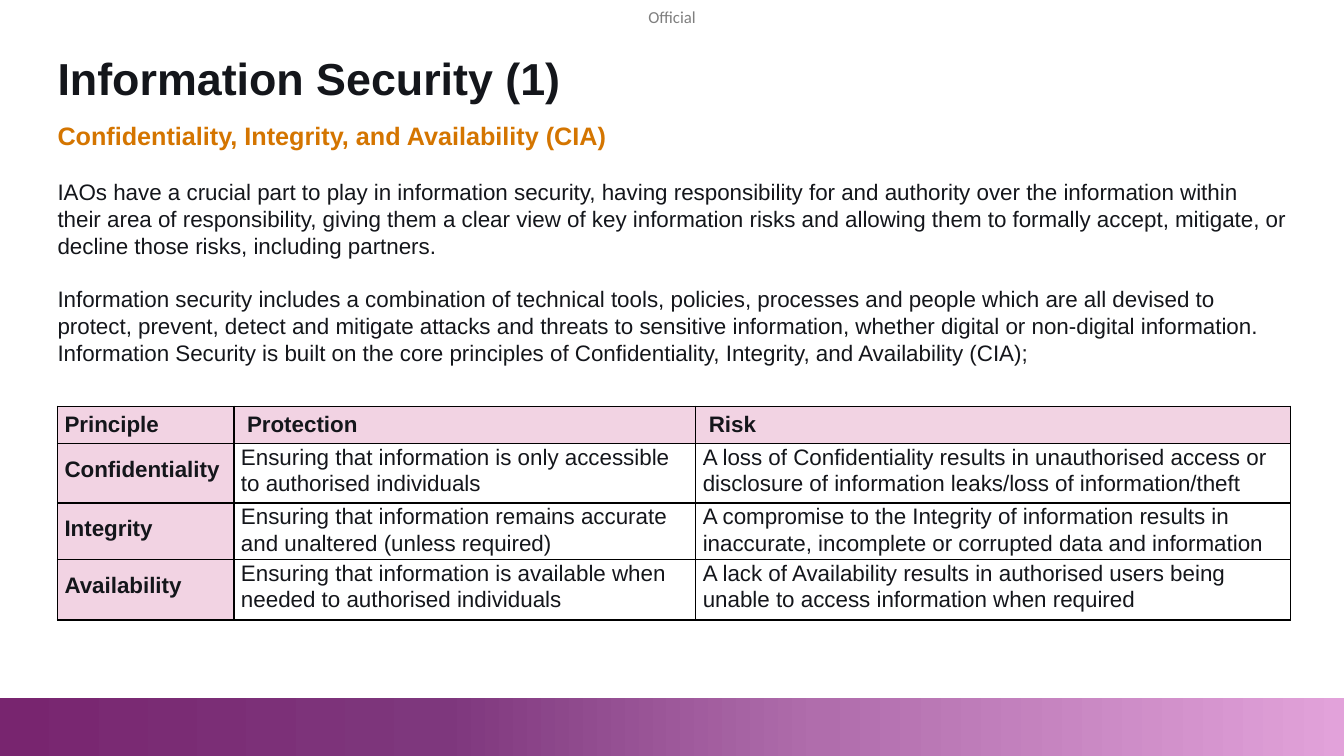
from lxml import etree
from pptx import Presentation
from pptx import util as u
from pptx.dml.color import RGBColor
from pptx.enum import shapes, text
from pptx.oxml import ns

INK = "14161B"
ORANGE = "D47500"
GREY = "7F7F7F"
PINK = "F2D3E3"
BLACK = "000000"
BAND = [(0, "78256F"), (33, "7E377D"), (61, "B06DAC"), (100, "E2A2DA")]

INTRODUCTION = [
    "IAOs have a crucial part to play in information security, having responsibility for and authority over "
    "the information within their area of responsibility, giving them a clear view of key information risks "
    "and allowing them to formally accept, mitigate, or decline those risks, including partners.",
    "Information security includes a combination of technical tools, policies, processes and people which are "
    "all devised to protect, prevent, detect and mitigate attacks and threats to sensitive information, "
    "whether digital or non-digital information.",
    "Information Security is built on the core principles of Confidentiality, Integrity, and Availability (CIA);",
]
PRINCIPLES = [
    ("Principle", "Protection", "Risk"),
    ("Confidentiality",
     "Ensuring that information is only accessible to authorised individuals",
     "A loss of Confidentiality results in unauthorised access or disclosure of information "
     "leaks/loss of information/theft"),
    ("Integrity",
     "Ensuring that information remains accurate and unaltered (unless required)",
     "A compromise to the Integrity of information results in inaccurate, incomplete or corrupted "
     "data and information"),
    ("Availability",
     "Ensuring that information is available when needed to authorised individuals",
     "A lack of Availability results in authorised users being unable to access information when required"),
]


def color(value):
    return RGBColor.from_string(value)


def add_element(parent, tag, **attributes):
    return etree.SubElement(parent, ns.qn(tag), **attributes)


def write(paragraph, content, size=16, fill=INK, bold=False, name="Arial", spacing=1.0,
          before=0, after=0, align=text.PP_ALIGN.LEFT, plain=False):
    if plain:
        properties = paragraph._p.get_or_add_pPr()
        properties.set("marL", "0")
        properties.set("indent", "0")
        add_element(properties, "a:buNone")
    paragraph.alignment = align
    paragraph.line_spacing = spacing
    paragraph.space_before = u.Pt(before)
    paragraph.space_after = u.Pt(after)
    run = paragraph.add_run()
    run.text = content
    run.font.size = u.Pt(size)
    run.font.name = name
    run.font.bold = bold
    run.font.color.rgb = color(fill)


class SlideBuilder:
    left = 4.28
    width = 91.5

    def __init__(self, presentation):
        self.column = presentation.slide_width / 100
        self.row = presentation.slide_height / 100
        self.slide = presentation.slides.add_slide(presentation.slide_layouts[3])

    def box(self, left, top, width, height):
        return (round(left * self.column), round(top * self.row),
                round(width * self.column), round(height * self.row))

    def frame(self, shape, anchor=text.MSO_ANCHOR.TOP, wrap=True):
        frame = shape.text_frame
        frame.margin_left = frame.margin_right = frame.margin_top = frame.margin_bottom = 0
        frame.auto_size = text.MSO_AUTO_SIZE.NONE
        frame.word_wrap = wrap
        frame.vertical_anchor = anchor
        return frame

    def placeholder(self, index, box, anchor=text.MSO_ANCHOR.TOP):
        shape = self.slide.placeholders[index]
        shape.left, shape.top, shape.width, shape.height = self.box(*box)
        return self.frame(shape, anchor)

    def label(self, content, box, **style):
        shape = self.slide.shapes.add_textbox(*self.box(*box))
        write(self.frame(shape, wrap=False).paragraphs[0], content, **style)

    def gradient_band(self, box, stops):
        shape = self.slide.shapes.add_shape(shapes.MSO_SHAPE.RECTANGLE, *self.box(*box))
        shape.shadow.inherit = False
        shape.line.fill.background()
        shape.fill.gradient()
        shape.fill.gradient_angle = 0
        stop_list = shape._element.spPr.find(".//" + ns.qn("a:gsLst"))
        for stop in list(stop_list):
            stop_list.remove(stop)
        for position, value in stops:
            stop = add_element(stop_list, "a:gs", pos=str(position * 1000))
            add_element(stop, "a:srgbClr", val=value)

    def cell(self, cell, content, is_header, is_principle):
        cell.margin_left = u.Inches(0.13 if is_header and not is_principle else 0.07)
        cell.margin_right = u.Inches(0.07)
        cell.margin_top = u.Inches(0.04 if is_header else 0.12 if is_principle else 0)
        cell.margin_bottom = 0
        cell.vertical_anchor = text.MSO_ANCHOR.TOP
        properties = cell._tc.get_or_add_tcPr()
        for side in ("L", "R", "T", "B"):
            border = add_element(properties, "a:ln" + side, w=str(u.Pt(1)))
            add_element(add_element(border, "a:solidFill"), "a:srgbClr", val=BLACK)
        if is_header or is_principle:
            cell.fill.solid()
            cell.fill.fore_color.rgb = color(PINK)
        else:
            cell.fill.background()
        write(cell.text_frame.paragraphs[0], content, bold=is_header or is_principle,
              spacing=1.07, after=8)

    def table(self, rows, left, top, widths, heights):
        box = self.box(left, top, sum(widths), sum(heights))
        table = self.slide.shapes.add_table(len(rows), len(widths), *box).table
        for column, width in zip(table.columns, widths):
            column.width = round(width * self.column)
        for row, height in zip(table.rows, heights):
            row.height = round(height * self.row)
        for i, row in enumerate(rows):
            for j, content in enumerate(row):
                self.cell(table.cell(i, j), content, i == 0, j == 0)


def main():
    presentation = Presentation()
    presentation.slide_width = u.Inches(13.33)
    presentation.slide_height = u.Inches(7.5)
    builder = SlideBuilder(presentation)
    left, width = builder.left, builder.width

    builder.label("Official", (48.24, 0.93, 3.9, 2.67), size=12, fill=GREY, name="Calibri")
    builder.gradient_band((0, 92.4, 100, 7.6), BAND)

    title = builder.placeholder(0, (left, 7.47, width, 8))
    write(title.paragraphs[0], "Information Security (1)", size=32, bold=True, spacing=0.9)

    subtitle = builder.placeholder(1, (left, 15.2, width, 5.47), text.MSO_ANCHOR.MIDDLE)
    write(subtitle.paragraphs[0], "Confidentiality, Integrity, and Availability (CIA)",
          size=18, fill=ORANGE, bold=True, plain=True)

    body = builder.placeholder(2, (left, 23.6, width, 24.27))
    for i, content in enumerate(INTRODUCTION):
        paragraph = body.add_paragraph() if i else body.paragraphs[0]
        write(paragraph, content, before=19 if i == 1 else 0, plain=True)

    builder.table(PRINCIPLES, left, 53.73, (13.13, 34.36, 44.26), (4.93, 7.87, 7.47, 8))
    presentation.save("out.pptx")


if __name__ == "__main__":
    main()
